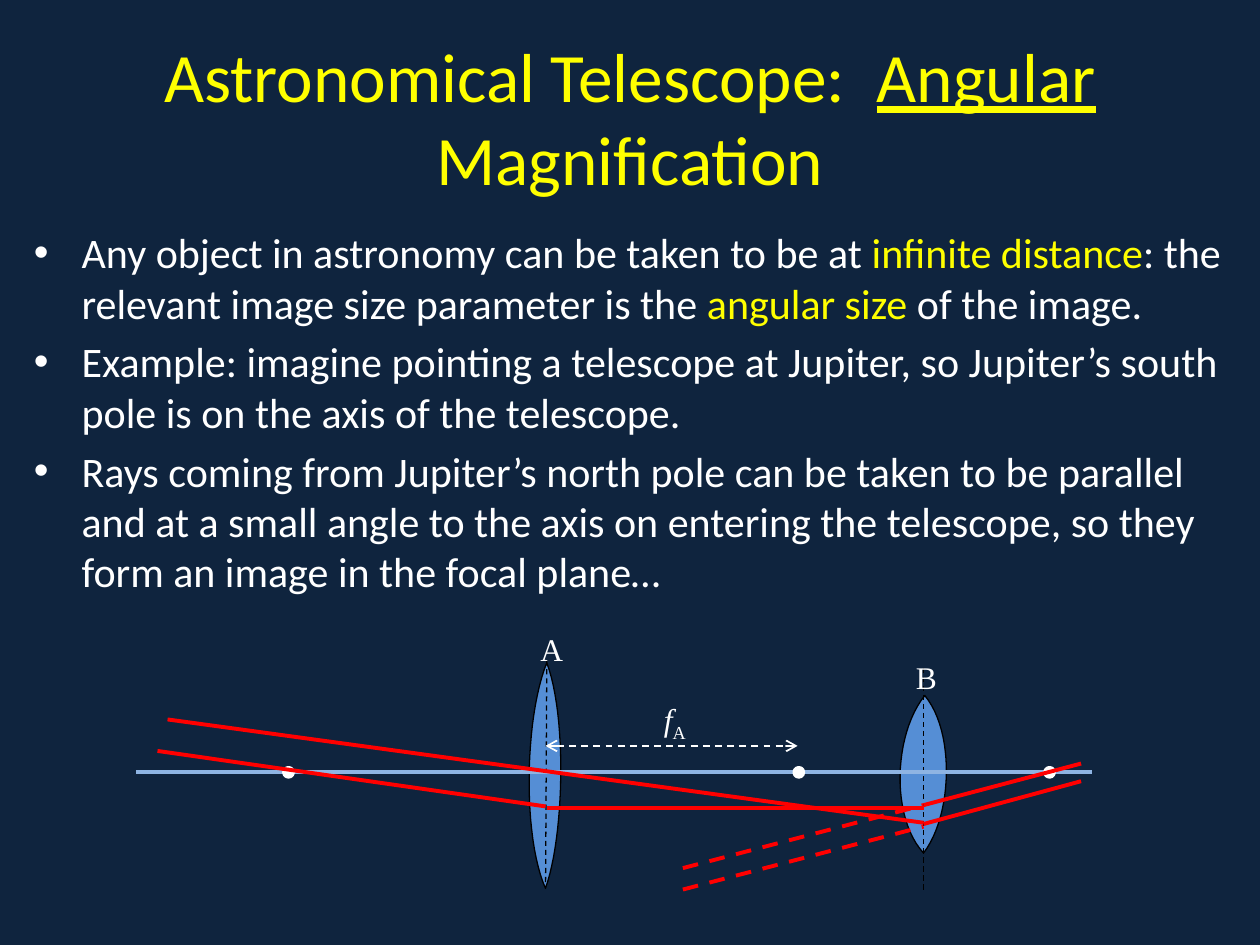
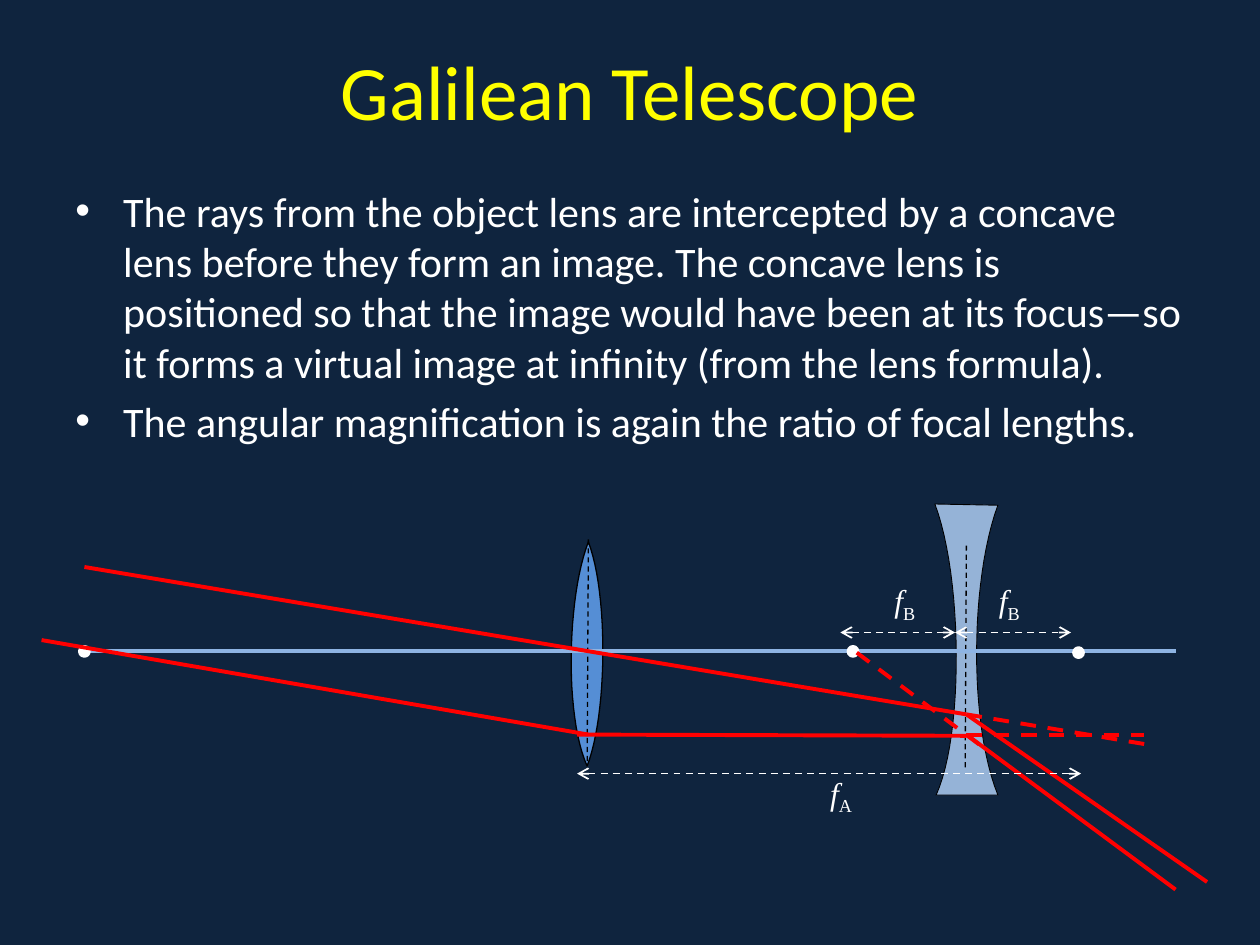
from dataclasses import dataclass
from typing import NamedTuple

import pptx
import pptx.dml.color
import pptx.enum.dml
import pptx.enum.shapes
import pptx.enum.text
import pptx.oxml
import pptx.oxml.ns
import pptx.util
from pptx.util import Inches

NAVY, YELLOW, WHITE = "0F243E", "FFFF00", "FFFFFF"
BLACK, RED, AXIS = "000000", "FF0000", "8EB4E3"
CONVEX, CONCAVE = "558ED5", "95B3D7"
SANS, SERIF = "Calibri", "Times New Roman"
BODY_SIZE, LABEL_SIZE = 24, 18
BULLET_INDENT = 0.38
DOT_SIZE = 0.07
CURVE_STEPS = 24

Point = tuple[float, float]


class Run(NamedTuple):
    text: str
    color: str = WHITE
    format: dict = {}
    baseline: int = 0


class Box(NamedTuple):
    left: float
    top: float
    width: float
    height: float


class Pen(NamedTuple):
    color: str
    width: float
    dashed: bool = False
    arrows: bool = False


RAY = Pen(RED, 2.25)
VIRTUAL_RAY = Pen(RED, 2.25, dashed=True)
OPTICAL_AXIS = Pen(AXIS, 2.25)
LENS_PLANE = Pen(BLACK, 0.75, dashed=True)
FOCAL_LENGTH = Pen(WHITE, 1, dashed=True, arrows=True)


class Segment(NamedTuple):
    pen: Pen
    start: Point
    end: Point


class Label(NamedTuple):
    left: float
    top: float
    runs: list[Run]


class Lens(NamedTuple):
    start: Point
    pieces: list[tuple[Point, ...]]
    fill: str = CONVEX
    outline: float = 0.75


@dataclass
class Lecture:
    title_box: Box
    title_size: float
    title: list[Run]
    body_box: Box
    bullets: list[list[Run]]
    lenses: list[Lens]
    planes: list[Segment]
    axis: Segment
    foci: list[Point]
    lines: list[Segment]
    labels: list[Label]


def rgb(color: str) -> pptx.dml.color.RGBColor:
    return pptx.dml.color.RGBColor.from_string(color)


def add_child(parent, tag: str, **attrs: str) -> None:
    child = pptx.oxml.parse_xml(f"<{tag} {pptx.oxml.ns.nsdecls('a')}/>")
    for name, value in attrs.items():
        child.set(name, value)
    parent.append(child)


def add_runs(p, runs: list[Run], font: str, size: float) -> None:
    for run in runs:
        r = p.add_run()
        r.text = run.text
        formats = {"name": font, "size": pptx.util.Pt(size), **run.format}
        for name, value in formats.items():
            setattr(r.font, name, value)
        r.font.color.rgb = rgb(run.color)
        if run.baseline:
            r.font._element.set("baseline", str(run.baseline))


def add_text_frame(s, box: Box, **formats):
    tf = s.shapes.add_textbox(*map(Inches, box)).text_frame
    for name, value in {"word_wrap": True, **formats}.items():
        setattr(tf, name, value)
    return tf


def add_title(s, lecture: Lecture) -> None:
    tf = add_text_frame(s, lecture.title_box,
                        vertical_anchor=pptx.enum.text.MSO_ANCHOR.MIDDLE)
    p = tf.paragraphs[0]
    p.alignment = pptx.enum.text.PP_ALIGN.CENTER
    add_runs(p, lecture.title, SANS, lecture.title_size)


def add_bullets(s, lecture: Lecture) -> None:
    tf = add_text_frame(s, lecture.body_box)
    for i, runs in enumerate(lecture.bullets):
        p = tf.add_paragraph() if i else tf.paragraphs[0]
        p.space_before = pptx.util.Pt(0.2 * BODY_SIZE)
        props = p._p.get_or_add_pPr()
        props.set("marL", str(Inches(BULLET_INDENT)))
        props.set("indent", str(-Inches(BULLET_INDENT)))
        add_child(props, "a:buFont", typeface="Arial")
        add_child(props, "a:buChar", char="•")
        add_runs(p, runs, SANS, BODY_SIZE)


def add_label(s, label: Label) -> None:
    tf = add_text_frame(s, Box(label.left, label.top, 0.58, 0.4))
    add_runs(tf.paragraphs[0], label.runs, SERIF, LABEL_SIZE)


def paint(sp, fill: str, line: str, width: float) -> None:
    sp.shadow.inherit = False
    sp.fill.solid()
    sp.fill.fore_color.rgb = rgb(fill)
    sp.line.color.rgb = rgb(line)
    sp.line.width = pptx.util.Pt(width)


def add_segment(s, segment: Segment) -> None:
    pen = segment.pen
    sp = s.shapes.add_connector(pptx.enum.shapes.MSO_CONNECTOR.STRAIGHT,
                                *map(Inches, segment.start + segment.end))
    sp.line.color.rgb = rgb(pen.color)
    sp.line.width = pptx.util.Pt(pen.width)
    if pen.dashed:
        sp.line.dash_style = pptx.enum.dml.MSO_LINE.DASH
    if pen.arrows:
        for tag in ("a:headEnd", "a:tailEnd"):
            add_child(sp.line._get_or_add_ln(), tag, type="arrow")
    add_child(sp._element.spPr, "a:effectLst")


def add_focus(s, center: Point) -> None:
    left, top = (Inches(value - DOT_SIZE / 2) for value in center)
    kind = pptx.enum.shapes.MSO_SHAPE.FLOWCHART_CONNECTOR
    sp = s.shapes.add_shape(kind, left, top, Inches(DOT_SIZE), Inches(DOT_SIZE))
    paint(sp, WHITE, WHITE, 2.25)


def bezier(points: tuple[Point, ...], t: float) -> Point:
    while len(points) > 1:
        points = tuple((x0 + (x1 - x0) * t, y0 + (y1 - y0) * t)
                       for (x0, y0), (x1, y1) in zip(points, points[1:]))
    return points[0]


def add_lens(s, lens: Lens) -> None:
    outline = [lens.start]
    for piece in lens.pieces:
        controls = (outline[-1], *piece)
        steps = CURVE_STEPS if len(piece) > 1 else 1
        outline += [bezier(controls, i / steps) for i in range(1, steps + 1)]
    vertices = [(Inches(x), Inches(y)) for x, y in outline]
    builder = s.shapes.build_freeform(*vertices[0])
    builder.add_line_segments(vertices[1:], close=True)
    paint(builder.convert_to_shape(), lens.fill, BLACK, lens.outline)


def add_lecture(prs, lecture: Lecture) -> None:
    s = prs.slides.add_slide(prs.slide_layouts[6])
    s.background.fill.solid()
    s.background.fill.fore_color.rgb = rgb(NAVY)
    add_title(s, lecture)
    add_bullets(s, lecture)
    for lens in lecture.lenses:
        add_lens(s, lens)
    for segment in [*lecture.planes, lecture.axis]:
        add_segment(s, segment)
    for center in lecture.foci:
        add_focus(s, center)
    for segment in lecture.lines:
        add_segment(s, segment)
    for label in lecture.labels:
        add_label(s, label)


def focal_label(left: float, top: float, lens: str) -> Label:
    return Label(left, top, [Run("f", format={"italic": True}),
                             Run(lens, baseline=-25000)])


ASTRONOMICAL = Lecture(
    title_box=Box(0.5, 0.3, 9, 1.25),
    title_size=39.6,
    title=[Run("Astronomical Telescope:  ", YELLOW),
           Run("Angular", YELLOW, {"underline": True}),
           Run(" Magnification", YELLOW)],
    body_box=Box(0.17, 1.75, 9.67, 4.95),
    bullets=[
        [Run("Any object in astronomy can be taken to be at "),
         Run("infinite distance", YELLOW),
         Run(": the relevant image size parameter is the "),
         Run("angular size ", YELLOW),
         Run("of the image.")],
        [Run("Example: imagine pointing a telescope at Jupiter, so Jupiter’s "
             "south pole is on the axis of the telescope.")],
        [Run("Rays coming from Jupiter’s north pole can be taken to be parallel "
             "and at a small angle to the axis on entering the telescope, so "
             "they form an image in the focal plane…")],
    ],
    lenses=[
        Lens((7.34, 5.52), [((7.09, 5.83), (7.07, 6.49), (7.33, 6.77)),
                            ((7.56, 6.47), (7.58, 5.81), (7.34, 5.52))]),
        Lens((4.34, 5.26), [((4.16, 5.71), (4.15, 6.65), (4.33, 7.05)),
                            ((4.48, 6.63), (4.5, 5.68), (4.34, 5.26))]),
    ],
    planes=[Segment(LENS_PLANE, (4.34, 5.24), (4.33, 7.03)),
            Segment(LENS_PLANE, (7.33, 5.3), (7.33, 7.08))],
    axis=Segment(OPTICAL_AXIS, (1.08, 6.13), (8.67, 6.13)),
    foci=[(2.29, 6.13), (6.34, 6.13), (8.33, 6.13)],
    lines=[
        Segment(RAY, (1.33, 5.71), (7.33, 6.53)),
        Segment(RAY, (4.34, 6.41), (7.33, 6.41)),
        Segment(RAY, (7.33, 6.39), (8.58, 6.06)),
        Segment(RAY, (1.25, 5.96), (4.33, 6.4)),
        Segment(RAY, (7.33, 6.54), (8.58, 6.2)),
        Segment(VIRTUAL_RAY, (5.42, 6.89), (7.33, 6.39)),
        Segment(VIRTUAL_RAY, (5.42, 7.06), (7.33, 6.56)),
        Segment(FOCAL_LENGTH, (4.33, 5.92), (6.33, 5.92)),
    ],
    labels=[Label(4.19, 4.95, [Run("A")]), Label(7.17, 5.17, [Run("B")]),
            focal_label(5.17, 5.51, "A")],
)

GALILEAN = Lecture(
    title_box=Box(0.5, 0.17, 9, 1.08),
    title_size=44,
    title=[Run("Galilean Telescope", YELLOW)],
    body_box=Box(0.5, 1.42, 9, 4.95),
    bullets=[
        [Run("The rays from the object lens are intercepted by a concave lens "
             "before they form an image. The concave lens is positioned so that "
             "the image would have been at its focus—so it forms a virtual "
             "image at infinity (from the lens formula).")],
        [Run("The angular magnification is again the ratio of focal lengths.")],
    ],
    lenses=[
        Lens((7.92, 4.01), [((7.42, 4),),
                            ((7.64, 4.58), (7.65, 5.83), (7.43, 6.31)),
                            ((7.92, 6.31),),
                            ((7.69, 5.74), (7.7, 4.61), (7.92, 4.01))],
             CONCAVE, 0.5),
        Lens((4.67, 4.3), [((4.5, 4.74), (4.48, 5.68), (4.66, 6.08)),
                           ((4.82, 5.67), (4.83, 4.72), (4.67, 4.3))]),
    ],
    planes=[Segment(LENS_PLANE, (4.67, 4.28), (4.66, 6.06)),
            Segment(LENS_PLANE, (7.67, 4.33), (7.66, 6.12))],
    axis=Segment(OPTICAL_AXIS, (0.67, 5.17), (9.33, 5.17)),
    foci=[(0.67, 5.17), (6.77, 5.17), (8.56, 5.18)],
    lines=[
        Segment(RAY, (0.67, 4.5), (7.67, 5.67)),
        Segment(RAY, (4.58, 5.83), (7.67, 5.84)),
        Segment(RAY, (7.67, 5.83), (9.33, 7.06)),
        Segment(RAY, (0.33, 5.08), (4.67, 5.83)),
        Segment(RAY, (7.67, 5.67), (9.58, 7)),
        Segment(VIRTUAL_RAY, (6.8, 5.18), (7.8, 5.93)),
        Segment(VIRTUAL_RAY, (7.67, 5.67), (9.17, 5.92)),
        Segment(VIRTUAL_RAY, (7.67, 5.83), (9.08, 5.83)),
        Segment(FOCAL_LENGTH, (4.58, 6.14), (8.58, 6.14)),
        Segment(FOCAL_LENGTH, (7.58, 5.02), (8.5, 5.02)),
        Segment(FOCAL_LENGTH, (6.67, 5.02), (7.58, 5.02)),
    ],
    labels=[focal_label(6.49, 6.09, "A"), focal_label(7, 4.56, "B"),
            focal_label(7.83, 4.56, "B")],
)


def main() -> None:
    prs = pptx.Presentation()
    prs.slide_width, prs.slide_height = Inches(10), Inches(7.5)
    for lecture in (ASTRONOMICAL, GALILEAN):
        add_lecture(prs, lecture)
    prs.save("out.pptx")


if __name__ == "__main__":
    main()
